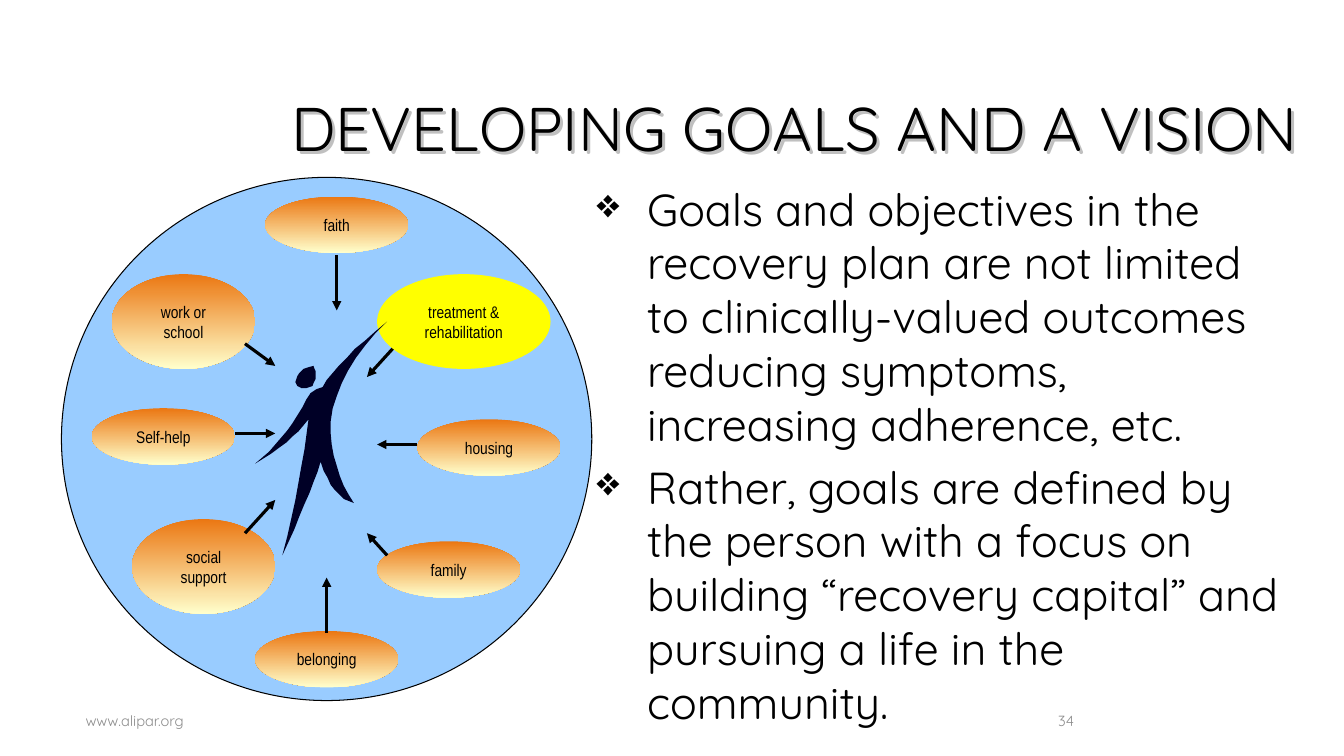
import collections

import pptx
import pptx.util
import pptx.dml.color
import pptx.enum.shapes
import pptx.enum.text
import pptx.oxml.ns
import lxml.etree

PX = 9144
BLACK, GREY, NAVY, SILVER = "000000", "8C8C8C", "000026", "C0C0C0"
SKY, YELLOW = "99CCFF", "FFFF00"
ORANGE_TO_CREAM = ("EB7712", "FFFFCC")
LEFT = pptx.enum.text.PP_ALIGN.LEFT
CENTER = pptx.enum.text.PP_ALIGN.CENTER
RIGHT = pptx.enum.text.PP_ALIGN.RIGHT
MIDDLE = pptx.enum.text.MSO_ANCHOR.MIDDLE

OVAL_WIDTH, ONE_LINE, TWO_LINES = 142, 56, 94
CURVE_STEPS = 8

Goal = collections.namedtuple("Goal", "text left top height tail tip")
Curve = collections.namedtuple("Curve", "control end")

GOALS = [
    Goal("faith", 263, 195, ONE_LINE, (334, 253), (334, 308)),
    Goal("Self-help", 91, 405, ONE_LINE, (233, 430), (273, 430)),
    Goal("social support", 131, 515, TWO_LINES, (243, 529), (273, 496)),
    Goal("belonging", 253, 626, ONE_LINE, (324, 628), (324, 573)),
    Goal("family", 374, 537, ONE_LINE, (384, 551), (364, 529)),
    Goal("housing", 414, 416, ONE_LINE, (414, 441), (374, 441)),
    Goal("work or\nschool", 111, 272, TWO_LINES, (243, 341), (273, 363)),
]
TREATMENT = Goal("treatment & rehabilitation", 374, 272, TWO_LINES,
                 (394, 341), (364, 374))
TREATMENT_WIDTH = 172

CHIN, NAPE, CROWN = (293, 379), (310, 383), (311, 363)
RAISED_HAND, LOW_HAND = (384, 319), (253, 460)
HIP, ARMPIT, CROTCH = (328, 418), (306, 416), (318, 458)
RIGHT_FOOT, LEFT_FOOT = (351, 499), (280, 551)
SHOULDER, NECK = (300, 404), (320, 384)

HEAD = [
    Curve((296, 389), NAPE),
    Curve((316, 373), CROWN),
    Curve((296, 365), CHIN),
]
BODY = [
    Curve((334, 367), HIP),
    Curve((328, 466), RIGHT_FOOT),
    Curve((330, 494), CROTCH),
    Curve((305, 496), LEFT_FOOT),
    Curve((299, 474), ARMPIT),
    Curve((288, 440), LOW_HAND),
    Curve((282, 436), SHOULDER),
    Curve((306, 386), NECK),
    Curve((336, 358), RAISED_HAND),
]
POINTS = [
    "Goals and objectives in the recovery plan are not limited to "
    "clinically-valued outcomes reducing symptoms, increasing adherence, etc.",
    "Rather, goals are defined by the person with a focus on building "
    "“recovery capital” and pursuing a life in the community.",
]


def px(*lengths):
    return [pptx.util.Emu(n * PX) for n in lengths]


def rgb(value):
    return pptx.dml.color.RGBColor.from_string(value)


def add_xml(parent, tag, **attributes):
    return lxml.etree.SubElement(parent, pptx.oxml.ns.qn(tag), **attributes)


def set_fill(sp, color):
    sp.fill.solid()
    sp.fill.fore_color.rgb = rgb(color)


def set_gradient(sp, colors):
    sp.fill.gradient()
    sp.fill.gradient_angle = 270
    for stop, color in zip(sp.fill.gradient_stops, colors):
        stop.color.rgb = rgb(color)


def set_line(shape, width):
    shape.line.color.rgb = rgb(BLACK)
    shape.line.width = pptx.util.Pt(width)


def add_paragraph(tf, index):
    return tf.add_paragraph() if index else tf.paragraphs[0]


def add_run(p, text, size, color=BLACK, font="Quicksand"):
    r = p.add_run()
    r.text = text
    r.font.size = pptx.util.Pt(size)
    r.font.name = font
    r.font.color.rgb = rgb(color)


def add_oval(shapes, left, top, width, height):
    sp = shapes.add_shape(pptx.enum.shapes.MSO_SHAPE.OVAL,
                          *px(left, top, width, height))
    sp.shadow.inherit = False
    sp.line.fill.background()
    return sp


def add_goal(shapes, goal, width=OVAL_WIDTH):
    sp = add_oval(shapes, goal.left, goal.top, width, goal.height)
    tf = sp.text_frame
    tf.word_wrap = True
    tf.vertical_anchor = MIDDLE
    for i, line in enumerate(goal.text.split("\n")):
        p = add_paragraph(tf, i)
        p.alignment = CENTER
        add_run(p, line, 12, font="Arial Narrow")
    return sp


def add_arrow(shapes, tail, tip):
    cx = shapes.add_connector(pptx.enum.shapes.MSO_CONNECTOR.STRAIGHT,
                              *px(*tail, *tip))
    set_line(cx, 2.25)
    add_xml(cx.line._get_or_add_ln(), "a:tailEnd", type="triangle")
    add_xml(cx._element.spPr, "a:effectLst")


def curve_points(start, curve):
    for step in range(1, CURVE_STEPS + 1):
        t = step / CURVE_STEPS
        yield tuple(round((1 - t) ** 2 * a + 2 * t * (1 - t) * b + t ** 2 * c, 2)
                    for a, b, c in zip(start, curve.control, curve.end))


def add_curved_outline(shapes, curves):
    start = curves[-1].end
    fb = shapes.build_freeform(*start, scale=PX)
    for curve in curves:
        fb.add_line_segments(list(curve_points(start, curve)), close=False)
        start = curve.end
    fb.add_line_segments([], close=True)
    sp = fb.convert_to_shape()
    sp.shadow.inherit = False
    set_fill(sp, NAVY)
    sp.line.fill.background()


def add_wheel(s):
    shapes = s.shapes.add_group_shape().shapes
    disc = add_oval(shapes, 61, 176, 526, 519)
    set_fill(disc, SKY)
    set_line(disc, 0.75)
    for goal in GOALS:
        set_gradient(add_goal(shapes, goal), ORANGE_TO_CREAM)
    for goal in [*GOALS, TREATMENT]:
        add_arrow(shapes, goal.tail, goal.tip)
    set_fill(add_goal(shapes, TREATMENT, TREATMENT_WIDTH), YELLOW)
    for curves in (HEAD, BODY):
        add_curved_outline(shapes, curves)


def add_title(s, text):
    sp = s.shapes.title
    sp.left, sp.top, sp.width, sp.height = px(167, 89, 1131, 83)
    sp.fill.background()
    effects = add_xml(sp._element.spPr, "a:effectLst")
    shadow = add_xml(effects, "a:outerShdw", dist="38100", dir="2700000", algn="tl")
    add_xml(shadow, "a:srgbClr", val=SILVER)
    sp.text_frame.vertical_anchor = MIDDLE
    p = sp.text_frame.paragraphs[0]
    p.alignment = RIGHT
    p.line_spacing = 0.9
    add_run(p, text, 44)


def add_text_box(s, *box):
    tf = s.shapes.add_textbox(*px(*box)).text_frame
    tf.word_wrap = True
    return tf


def add_footer(s, left, width, text, align):
    tf = add_text_box(s, left, 695, width, 40)
    tf.vertical_anchor = MIDDLE
    p = tf.paragraphs[0]
    p.alignment = align
    add_run(p, text, 10.5, GREY)


def add_bullets(s, points):
    tf = add_text_box(s, 582, 175, 706, 559)
    indent = px(50)[0]
    for i, text in enumerate(points):
        p = add_paragraph(tf, i)
        if i:
            p.space_before = pptx.util.Pt(6.4)
        pPr = p._p.get_or_add_pPr()
        pPr.set("marL", str(indent))
        pPr.set("indent", str(-indent))
        add_xml(add_xml(pPr, "a:buClr"), "a:srgbClr", val=BLACK)
        add_xml(pPr, "a:buSzPct", val="90000")
        add_xml(pPr, "a:buChar", char="❖")
        add_run(p, text, 32)


def main():
    prs = pptx.Presentation()
    prs.slide_width, prs.slide_height = px(1333, 750)
    s = prs.slides.add_slide(prs.slide_layouts[5])
    add_wheel(s)
    add_title(s, "DEVELOPING GOALS AND A VISION")
    add_footer(s, 75, 850, "www.alipar.org", LEFT)
    add_footer(s, 842, 233, "34", RIGHT)
    add_bullets(s, POINTS)
    prs.save("out.pptx")


if __name__ == "__main__":
    main()
